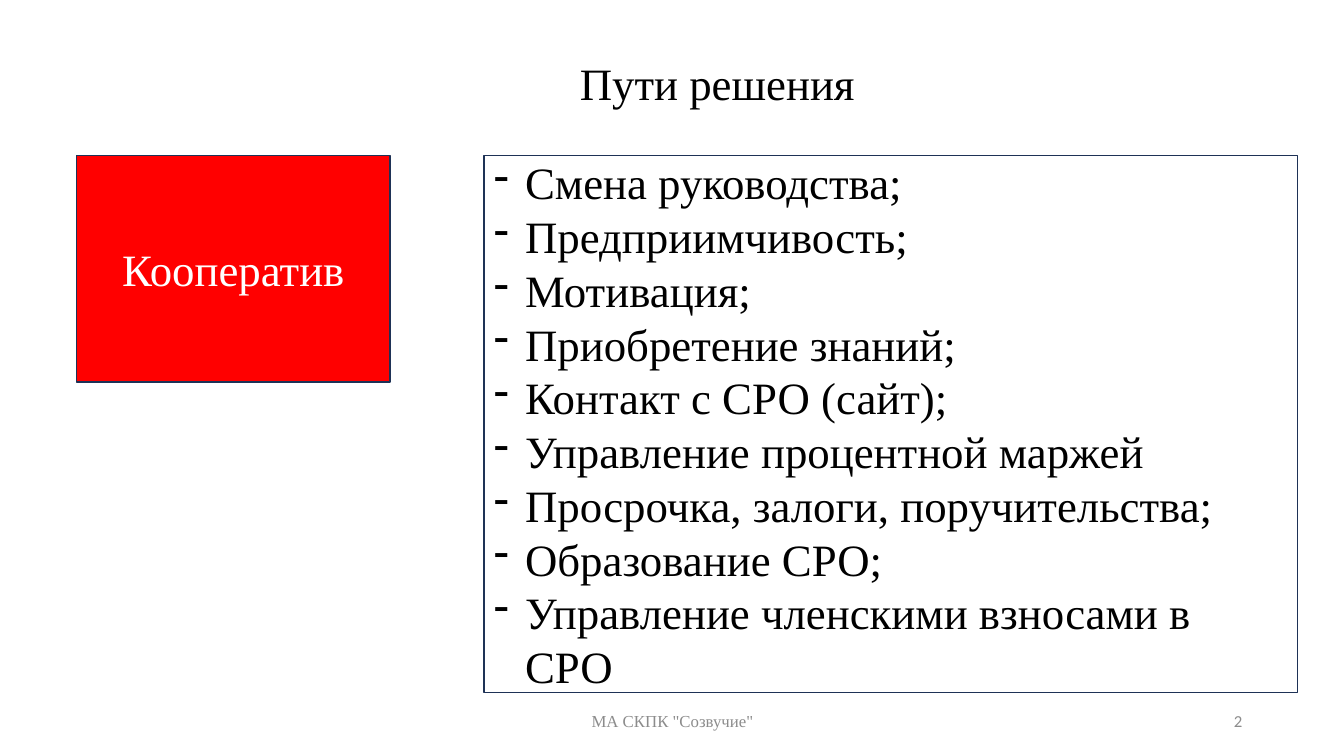
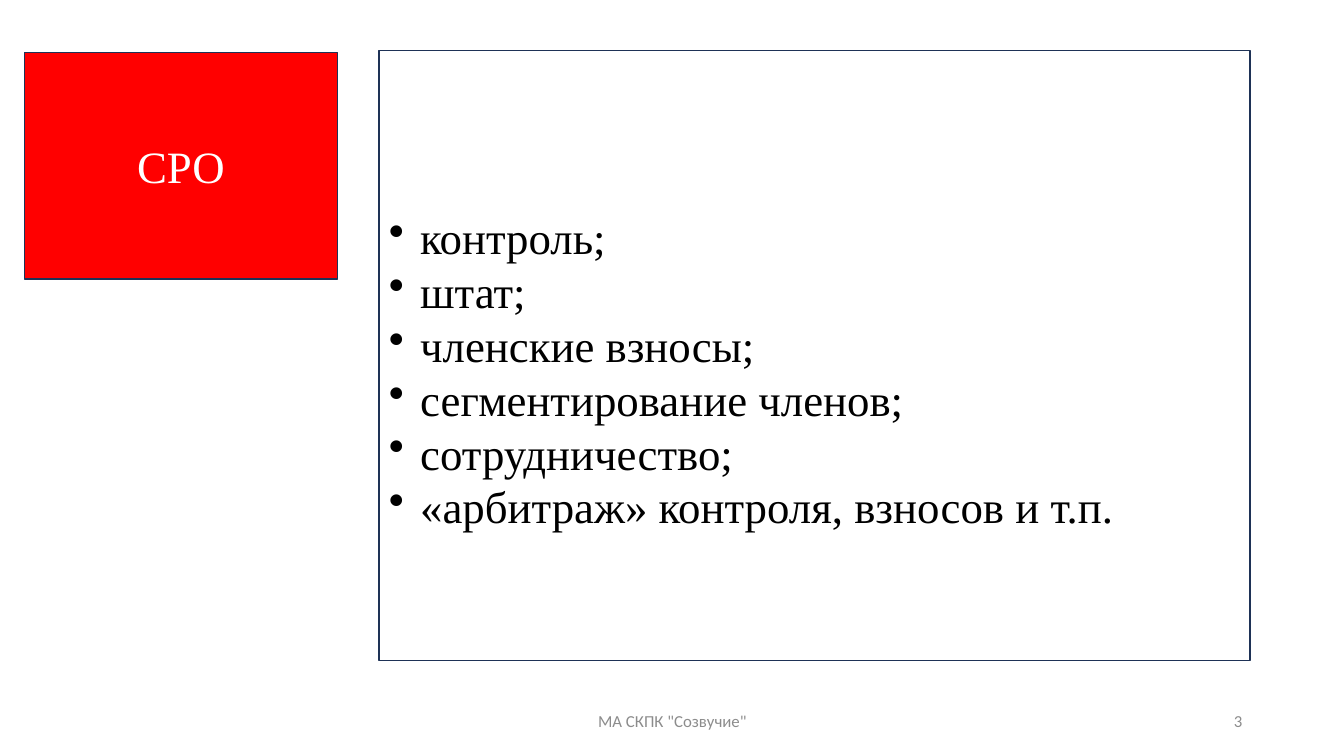
from dataclasses import dataclass

from lxml import etree
from pptx import Presentation
from pptx.dml.color import RGBColor
from pptx.enum.shapes import MSO_SHAPE
from pptx.enum.text import MSO_ANCHOR, PP_ALIGN
from pptx.oxml.ns import qn
from pptx.util import Inches, Pt

RECT = MSO_SHAPE.RECTANGLE
TOP, MIDDLE = MSO_ANCHOR.TOP, MSO_ANCHOR.MIDDLE
LEFT, CENTER, RIGHT = PP_ALIGN.LEFT, PP_ALIGN.CENTER, PP_ALIGN.RIGHT
TITLE_ONLY, BLANK = 5, 6


@dataclass(frozen=True)
class Theme:
    serif: str = "Times New Roman"
    sans: str = "Calibri"
    text: str = "000000"
    light: str = "FFFFFF"
    muted: str = "8C8C8C"
    accent: str = "FF0000"
    border: str = "1E3256"
    main_size: int = 32
    footer_size: int = 12
    border_width: int = 1
    indent: float = 0.31


class Deck:
    """Holds the theme, the presentation and the current slide."""

    def __init__(self, theme):
        self.theme = theme
        self.prs = Presentation()
        self.prs.slide_width = Inches(13.33)
        self.prs.slide_height = Inches(7.5)

    def new_slide(self, layout):
        self.slide = self.prs.slides.add_slide(self.prs.slide_layouts[layout])

    def set_text(self, sp, lines, color, size=None, font=None, align=CENTER,
                 anchor=MIDDLE, bullet=None, inset_top=0.05):
        """Fill a shape with one paragraph per line."""
        tf = sp.text_frame
        frame_format = {"word_wrap": True, "vertical_anchor": anchor,
                        "margin_left": Inches(0.1), "margin_right": Inches(0.1),
                        "margin_top": Inches(inset_top), "margin_bottom": Inches(0.05)}
        for name, value in frame_format.items():
            setattr(tf, name, value)
        font_format = {"name": font or self.theme.serif,
                       "size": Pt(size or self.theme.main_size)}
        for i, line in enumerate(lines):
            p = tf.paragraphs[0] if i == 0 else tf.add_paragraph()
            p.alignment = align
            r = p.add_run()
            r.text = line
            for name, value in font_format.items():
                setattr(r.font, name, value)
            r.font.color.rgb = RGBColor.from_string(color)
            if bullet:
                self.add_bullet(p, bullet)

    def add_bullet(self, p, char):
        pPr = p._p.get_or_add_pPr()
        indent = Inches(self.theme.indent)
        pPr.set("marL", str(indent))
        pPr.set("indent", str(-indent))
        etree.SubElement(pPr, qn("a:buChar")).set("char", char)

    def title(self, text, x, y, w, h):
        sp = self.slide.shapes.title
        for name, value in zip(("left", "top", "width", "height"), (x, y, w, h)):
            setattr(sp, name, Inches(value))
        self.set_text(sp, [text], self.theme.text, anchor=TOP)

    def box(self, x, y, w, h, fill=None):
        sp = self.slide.shapes.add_shape(RECT, Inches(x), Inches(y), Inches(w), Inches(h))
        sp.shadow.inherit = False
        if fill:
            sp.fill.solid()
            sp.fill.fore_color.rgb = RGBColor.from_string(fill)
        else:
            sp.fill.background()
        sp.line.color.rgb = RGBColor.from_string(self.theme.border)
        sp.line.width = Pt(self.theme.border_width)
        return sp

    def topic(self, text, x, y):
        sp = self.box(x, y, 3.11, 2.25, self.theme.accent)
        self.set_text(sp, [text], self.theme.light)

    def bullets(self, items, x, y, w, h, bullet, inset_top=0.05):
        sp = self.box(x, y, w, h)
        self.set_text(sp, items, self.theme.text, align=LEFT, bullet=bullet,
                      inset_top=inset_top)

    def footer(self, number, font):
        parts = [('МА СКПК "Созвучие"', 4.42, 4.5, CENTER, font),
                 (str(number), 9.42, 3, RIGHT, self.theme.sans)]
        for text, x, w, align, face in parts:
            sp = self.slide.shapes.add_textbox(Inches(x), Inches(6.95), Inches(w), Inches(0.4))
            self.set_text(sp, [text], self.theme.muted, self.theme.footer_size, face, align)


theme = Theme()
deck = Deck(theme)

# Ways forward for the cooperative
deck.new_slide(TITLE_ONLY)
deck.title("Пути решения", 1.36, 0.5, 11.51, 0.64)
deck.bullets(["Смена руководства;", "Предприимчивость;", "Мотивация;",
              "Приобретение знаний;", "Контакт с СРО (сайт);",
              "Управление процентной маржей",
              "Просрочка, залоги, поручительства;", "Образование СРО;",
              "Управление членскими взносами в СРО"],
             4.8, 1.54, 8.07, 5.33, "-")
deck.topic("Кооператив", 0.76, 1.54)
deck.footer(2, theme.serif)

# Tasks of the self-regulatory organisation
deck.new_slide(BLANK)
deck.topic("СРО", 0.24, 0.52)
deck.bullets(["контроль;", "штат;", "членские взносы;", "сегментирование членов;",
              "сотрудничество;", "«арбитраж» контроля, взносов и т.п."],
             3.76, 0.5, 8.64, 6.05, "•", inset_top=0.37)
deck.footer(3, theme.sans)

deck.prs.save("out.pptx")
